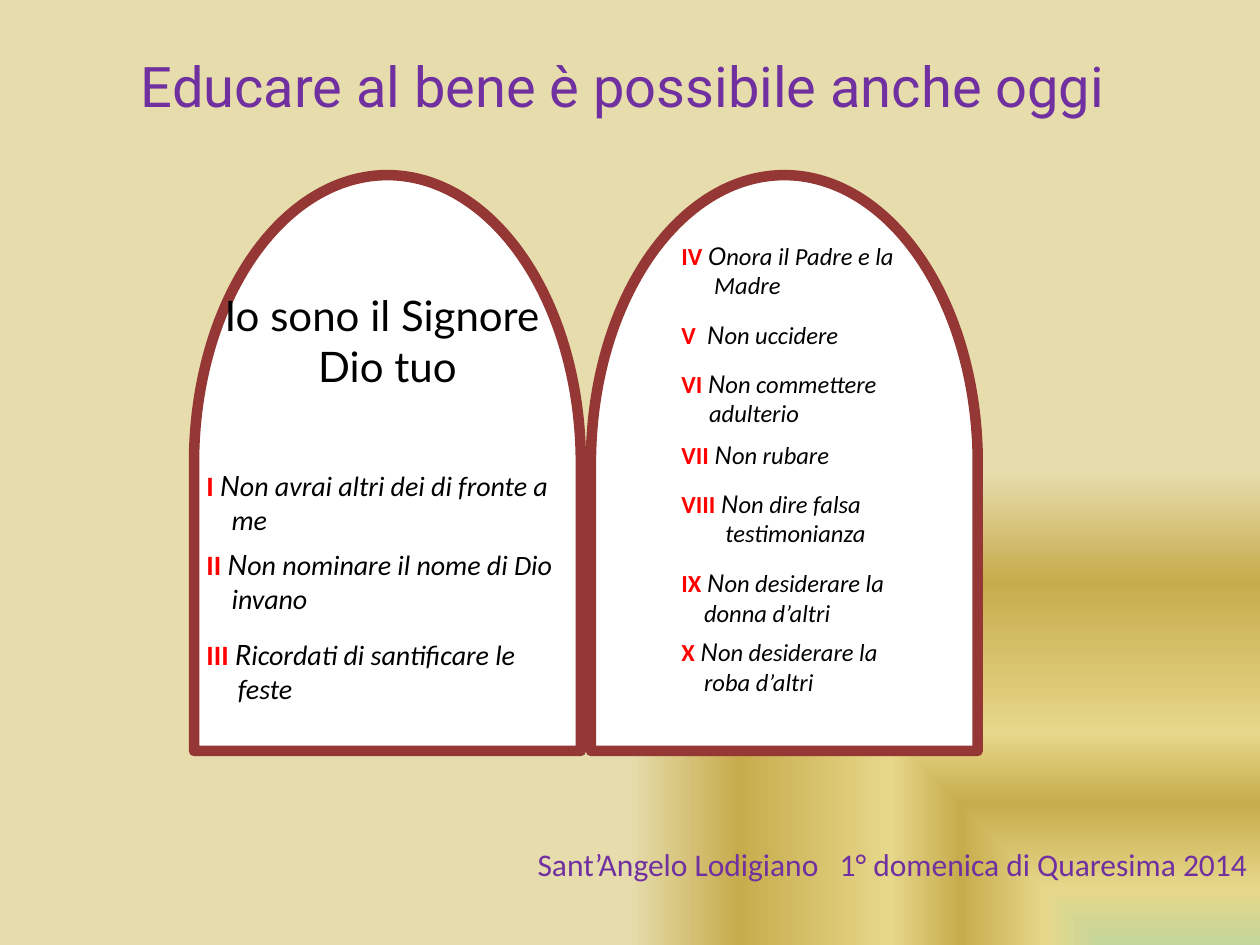
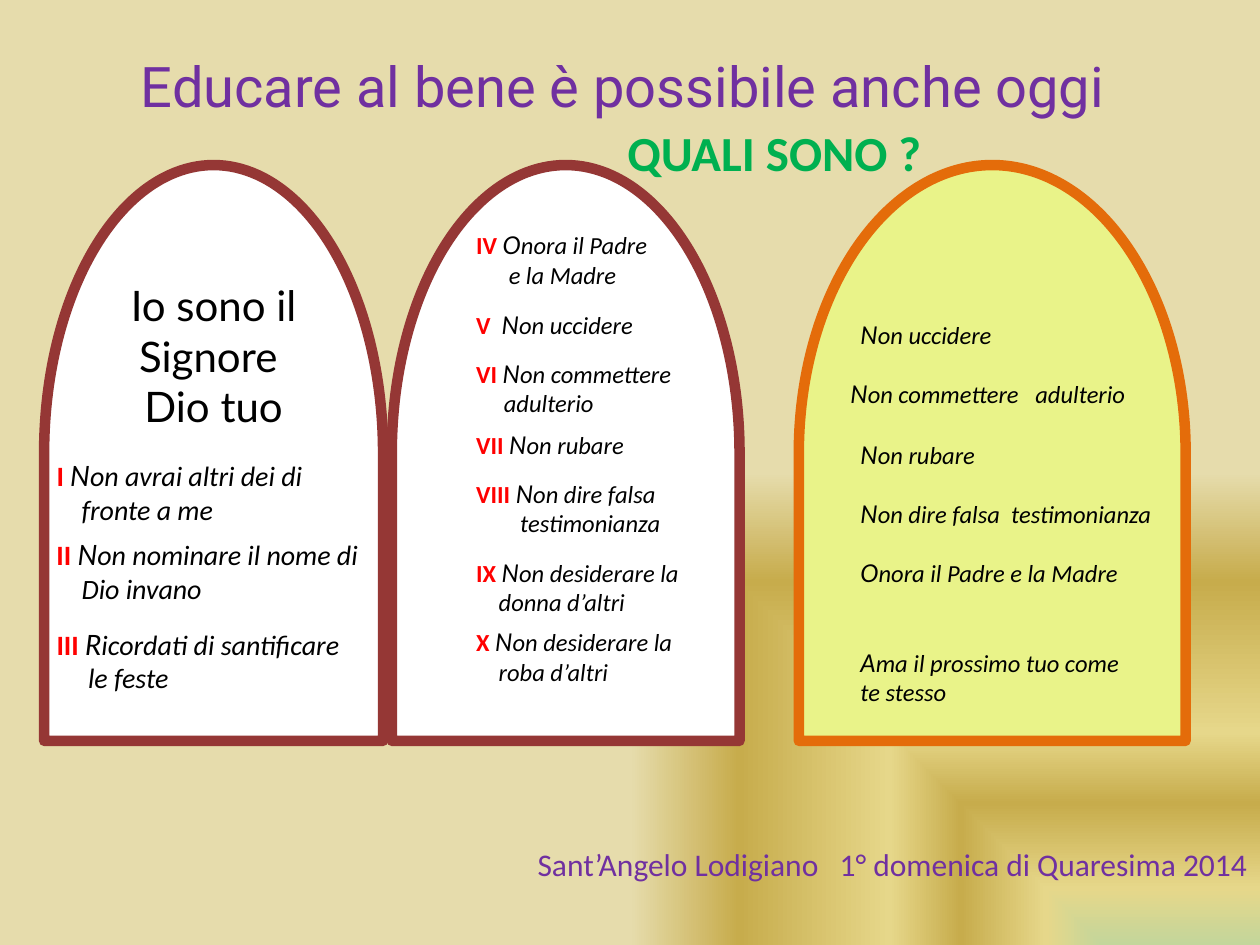
from dataclasses import dataclass

from pptx import Presentation
from pptx.dml.color import RGBColor
from pptx.enum.shapes import MSO_SHAPE
from pptx.enum.text import MSO_ANCHOR, MSO_AUTO_SIZE, PP_ALIGN
from pptx.oxml import parse_xml
from pptx.oxml.ns import nsdecls, qn
from pptx.util import Inches, Pt


@dataclass(frozen=True)
class Theme:
    purple: str = "7030A0"
    red: str = "FF0000"
    green: str = "00B050"
    black: str = "000000"
    white: str = "FFFFFF"
    brown: str = "953735"
    lime: str = "E9F389"
    orange: str = "E46C0A"
    stops: tuple = ((0, "C3D69B"), (12, "E6D78A"), (30, "C7AC4C"),
                    (45, "E6D78A"), (77, "C7AC4C"), (100, "E6DCAC"))
    head: str = "Roboto"
    body: str = "Calibri"
    accent: str = "Lato"
    title: int = 32
    query: int = 28
    motto: int = 24
    foot: int = 18
    large: int = 16
    small: int = 14
    border: int = 6


T = Theme()
TITLE = "Educare al bene è possibile anche oggi "
FOOT = "Sant’Angelo Lodigiano   1° domenica di Quaresima 2014"
HIGH = 4.57

DUTIES = [
    (2.28, 1, 0.2, "I ", ("Non avrai altri dei di fronte a", "me"),
     ("Non avrai altri dei di", "fronte a me")),
    (2.91, 1.03, 0.2, "II ", ("Non nominare il nome di Dio", "invano"),
     ("Non nominare il nome di", "Dio invano")),
    (3.62, 1, 0.25, "III ", ("Ricordati di santificare le", "feste"),
     ("Ricordati di santificare", "le feste")),
]
RULES = [
    (0.47, 0.62, 0.26, "IV ", ("Onora il Padre e la", "Madre"),
     ("Onora il Padre", "e la Madre")),
    (1.1, 0.77, 0, "V  ", ("Non uccidere",)),
    (1.49, 0.69, 0.22, "VI ", ("Non commettere", "adulterio")),
    (2.05, 0.74, 0, "VII ", ("Non rubare",)),
    (2.44, 0.77, 0.35, "VIII ", ("Non dire falsa", "testimonianza")),
    (3.07, 0.74, 0.18, "IX ", ("Non desiderare la", "donna d’altri")),
    (3.62, 0.67, 0.18, "X ", ("Non desiderare la", "roba d’altri")),
]
ANSWERS = [
    (0.39, 1.18, 2.05, 0.34, "Non uccidere"),
    (0.31, 1.65, 2.52, 0.34, "Non commettere   adulterio"),
    (0.39, 2.13, 2.28, 0.34, "Non rubare"),
    (0.39, 2.6, 2.6, 0.34, "Non dire falsa  testimonianza"),
    (0.39, 3.07, 2.6, 0.57, "Onora il Padre e la Madre"),
    (0.39, 3.78, 2.36, 0.57, "Ama il prossimo tuo come te stesso"),
]


def color(code):
    return RGBColor.from_string(code)


def style(para, name, size, code, bold=False, italic=False, align=PP_ALIGN.LEFT):
    font = para.font
    font.name, font.size = name, Pt(size)
    font.bold, font.italic = bold, italic
    font.color.rgb = color(code)
    para.alignment = align


def add_box(slide, left, top, width, height, fill=None):
    box = slide.shapes.add_textbox(*map(Inches, (left, top, width, height)))
    box.text_frame.word_wrap = True
    box.text_frame.auto_size = MSO_AUTO_SIZE.SHAPE_TO_FIT_TEXT
    if fill:
        box.fill.solid()
        box.fill.fore_color.rgb = color(fill)
    return box.text_frame


def add_phrase(para, text):
    first = para.add_run()
    first.text = text[0]
    first.font.name = T.accent
    para.add_run().text = text[1:]


def add_arch(slide, left, top, width, fill, edge):
    shift = (HIGH - width) / 2
    arch = slide.shapes.add_shape(
        MSO_SHAPE.FLOWCHART_DELAY, Inches(left - shift), Inches(top + shift),
        Inches(HIGH), Inches(width))
    arch.rotation = 270
    arch.shadow.inherit = False
    arch.fill.solid()
    arch.fill.fore_color.rgb = color(fill)
    arch.line.color.rgb = color(edge)
    arch.line.width = Pt(T.border)


def add_rules(slide, left, top, width, rules, size, brief):
    for drop, share, indent, mark, *forms in rules:
        lines = forms[-1] if brief else forms[0]
        height = 0.1 + len(lines) * size / 60
        para = add_box(slide, left, top + drop, width * share, height).paragraphs[0]
        style(para, T.body, size, T.black, italic=True)
        run = para.add_run()
        run.text = mark
        run.font.bold, run.font.italic = True, False
        run.font.color.rgb = color(T.red)
        add_phrase(para, lines[0])
        for line in lines[1:]:
            para.add_line_break()
            para.add_run().text = line
            props = para._p.get_or_add_pPr()
            props.set("marL", str(Inches(indent)))
            props.set("indent", str(-Inches(indent)))


def add_first(slide, left, top, width, brief=False):
    add_arch(slide, left, top, width, T.white, T.brown)
    frame = add_box(slide, left, top + 0.86, width, 0.91)
    frame.text = "Io sono il Signore \nDio tuo"
    for para in frame.paragraphs:
        style(para, T.accent, T.motto, T.black, align=PP_ALIGN.CENTER)
    add_rules(slide, left, top, width, DUTIES, T.large, brief)


def add_second(slide, left, top, width, inset, brief=False):
    add_arch(slide, left, top, width, T.white, T.brown)
    add_rules(slide, left + inset, top, width, RULES, T.small, brief)


def add_third(slide, left, top, width):
    add_arch(slide, left, top, width, T.lime, T.orange)
    for across, drop, wide, high, text in ANSWERS:
        frame = add_box(slide, left + across, top + drop, wide, high, T.lime)
        style(frame.paragraphs[0], T.body, T.small, T.black, italic=True)
        add_phrase(frame.paragraphs[0], text)


def add_line(slide, box, text, size, code, align, bold=False):
    para = add_box(slide, *box).paragraphs[0]
    para.text = text
    style(para, T.body, size, code, bold=bold, align=align)


def paint_back(master):
    master.background.fill.solid()
    props = master.element.find(".//" + qn("p:bgPr"))
    stops = "".join(
        f'<a:gs pos="{spot * 1000}"><a:srgbClr val="{code}"/></a:gs>'
        for spot, code in T.stops)
    grad = parse_xml(
        f'<a:gradFill {nsdecls("a")} rotWithShape="1"><a:gsLst>{stops}</a:gsLst>'
        '<a:path path="rect"><a:fillToRect l="100000" t="100000"/></a:path>'
        '<a:tileRect r="-100000" b="-100000"/></a:gradFill>')
    props.replace(props[0], grad)


def add_slide(deck):
    slide = deck.slides.add_slide(deck.slide_layouts.get_by_name("Title Only"))
    title = slide.shapes.title
    title.left, title.top = Inches(0), Inches(0.36)
    title.width, title.height = Inches(10), Inches(0.64)
    frame = title.text_frame
    frame.text = TITLE
    frame.vertical_anchor = MSO_ANCHOR.TOP
    frame.auto_size = MSO_AUTO_SIZE.NONE
    style(frame.paragraphs[0], T.head, T.title, T.purple, align=PP_ALIGN.CENTER)
    add_line(slide, (1.81, 6.66, 8.19, 0.4), FOOT, T.foot, T.purple, PP_ALIGN.RIGHT)
    return slide


def main():
    deck = Presentation()
    deck.slide_width, deck.slide_height = Inches(10), Inches(7.5)
    paint_back(deck.slide_master)

    pair = add_slide(deck)
    add_first(pair, 1.54, 1.39, 3.07)
    add_second(pair, 4.69, 1.39, 3.07, 0.62)

    trio = add_slide(deck)
    add_first(trio, 0.35, 1.31, 2.69, brief=True)
    add_second(trio, 3.11, 1.31, 2.76, 0.57, brief=True)
    add_third(trio, 6.34, 1.31, 3.07)
    add_line(trio, (4.53, 0.92, 3.23, 0.57), "QUALI SONO ?", T.query, T.green,
             PP_ALIGN.CENTER, bold=True)
    deck.save("out.pptx")


if __name__ == "__main__":
    main()
